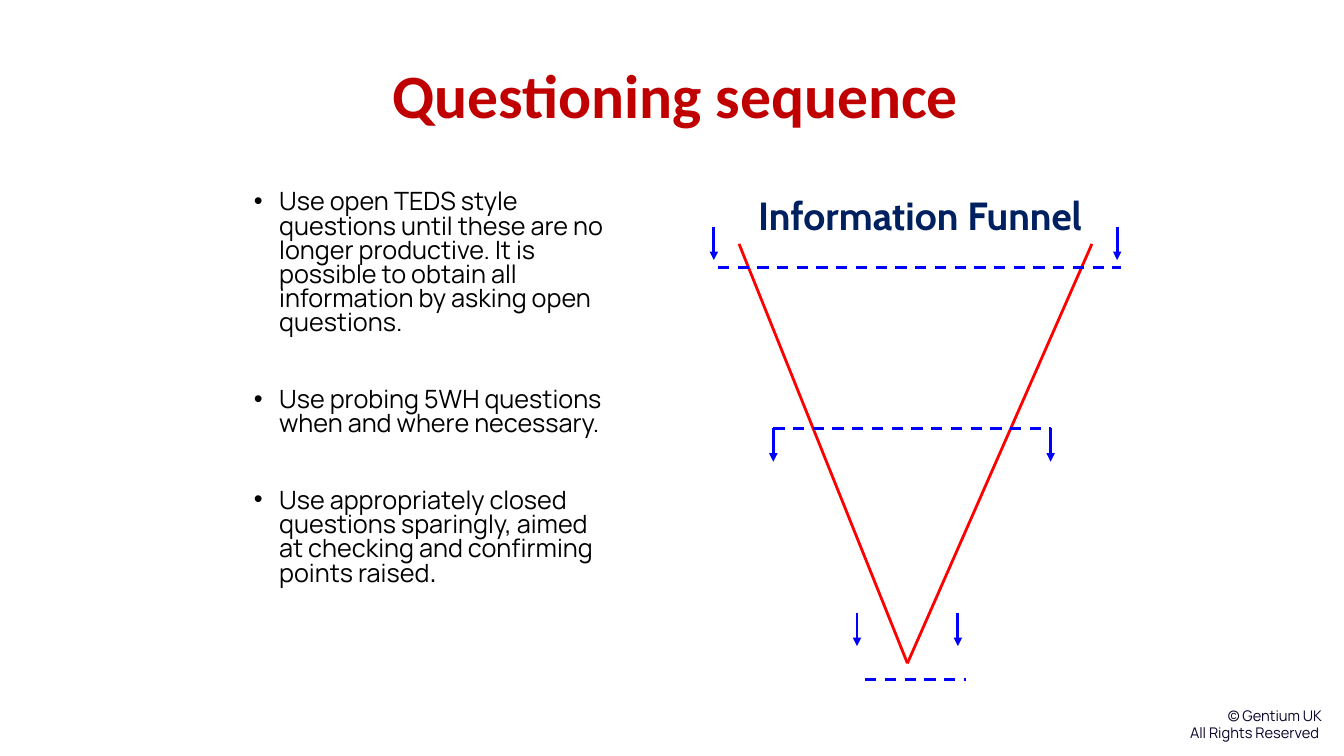
from dataclasses import dataclass

from lxml import etree
from pptx import Presentation
from pptx.dml.color import RGBColor
from pptx.enum.dml import MSO_LINE
from pptx.enum.shapes import MSO_CONNECTOR
from pptx.enum.text import MSO_ANCHOR, PP_ALIGN
from pptx.oxml.ns import qn
from pptx.util import Inches, Pt

STRAIGHT = MSO_CONNECTOR.STRAIGHT
DASH = MSO_LINE.DASH
TOP, MIDDLE = MSO_ANCHOR.TOP, MSO_ANCHOR.MIDDLE
LEFT, CENTER, RIGHT = PP_ALIGN.LEFT, PP_ALIGN.CENTER, PP_ALIGN.RIGHT


@dataclass(frozen=True)
class Theme:
    title: str = "C00000"
    body: str = "000000"
    heading: str = "002060"
    footer: str = "0A0128"
    funnel: str = "FF0000"
    level: str = "0000FF"
    title_size: float = 44
    body_size: float = 18
    heading_size: float = 28
    footer_size: float = 10.5
    line_width: float = 2


theme = Theme()

deck = Presentation()
deck.slide_width, deck.slide_height = Inches(13.33), Inches(7.5)
page = deck.slides.add_slide(deck.slide_layouts[6])


def add_text(place, paragraphs, size, align=LEFT, anchor=TOP, wrap=True):
    """Each paragraph is a list of (text, font, colour, bold) spans."""
    box = page.shapes.add_textbox(*[Inches(length) for length in place])
    frame = box.text_frame
    frame.word_wrap = wrap
    frame.vertical_anchor = anchor
    for index, spans in enumerate(paragraphs):
        para = frame.add_paragraph() if index else frame.paragraphs[0]
        para.alignment = align
        for text, font, colour, bold in spans:
            span = para.add_run()
            span.text = text
            span.font.name = font
            span.font.size = Pt(size)
            span.font.bold = bold
            span.font.color.rgb = RGBColor.from_string(colour)
    return frame


def add_line(start, end, colour, dashed=False, arrow=False):
    points = [Inches(length) for length in (*start, *end)]
    connector = page.shapes.add_connector(STRAIGHT, *points)
    connector.line.color.rgb = RGBColor.from_string(colour)
    connector.line.width = Pt(theme.line_width)
    if dashed:
        connector.line.dash_style = DASH
    if arrow:
        outline = connector._element.spPr.find(qn("a:ln"))
        etree.SubElement(outline, qn("a:tailEnd"), type="triangle")
    etree.SubElement(connector._element.spPr, qn("a:effectLst"))


# Copyright footer
add_text((11.62, 6.96, 1.59, 0.45),
         [[(line, "Manrope", theme.footer, False)]
          for line in ("© Gentium UK", "All Rights Reserved ")],
         theme.footer_size, align=RIGHT, wrap=False)

# Title
title = add_text((0.54, 0.27, 12.32, 1.42),
                 [[("Questioning sequence", "Calibri", theme.title, True)]],
                 theme.title_size, align=CENTER, anchor=MIDDLE)
title.paragraphs[0].line_spacing = 0.9

# Bulleted advice
advice = [
    "Use open TEDS style questions until these are no longer productive. "
    "It is possible to obtain all information by asking open questions.",
    "Use probing 5WH questions when and where necessary.",
    "Use appropriately closed questions sparingly, aimed at checking and "
    "confirming points raised",
]
items = [[(text, "Manrope", theme.body, False)] for text in advice]
items[-1].append((".", "Arial", theme.body, False))
bullets = add_text((2.42, 1.85, 3.72, 4.39), items, theme.body_size)
for index, para in enumerate(bullets.paragraphs):
    para.line_spacing = 0.8
    para.space_before = Pt(37.5 if index else 0)
    properties = para._p.get_or_add_pPr()
    properties.set("marL", str(Inches(0.25)))
    properties.set("indent", str(Inches(-0.25)))
    etree.SubElement(properties, qn("a:buFont"), typeface="Arial")
    etree.SubElement(properties, qn("a:buChar"), char="•")

# Funnel sides and heading
for rim in (7.33, 10.83):
    add_line((rim, 2.42), (9, 6.58), theme.funnel)
add_text((7, 1.85, 4.25, 0.57),
         [[("Information Funnel", "Cabin", theme.heading, True)]],
         theme.heading_size, align=CENTER)

# Funnel levels: dashed line (left, right, height), then its two arrows
levels = [
    ((7.12, 11.12, 2.65), (7.08, 11.08, 2.25)),
    ((7.67, 10.42, 4.25), (7.67, 10.42, 4.25)),
    ((8.58, 9.58, 6.74), (8.5, 9.5, 6.08)),
]
for (left, right, height), (*arrows, arrow_top) in levels:
    add_line((left, height), (right, height), theme.level, dashed=True)
    for x in arrows:
        add_line((x, arrow_top), (x, arrow_top + 0.33), theme.level, arrow=True)

deck.save("out.pptx")
